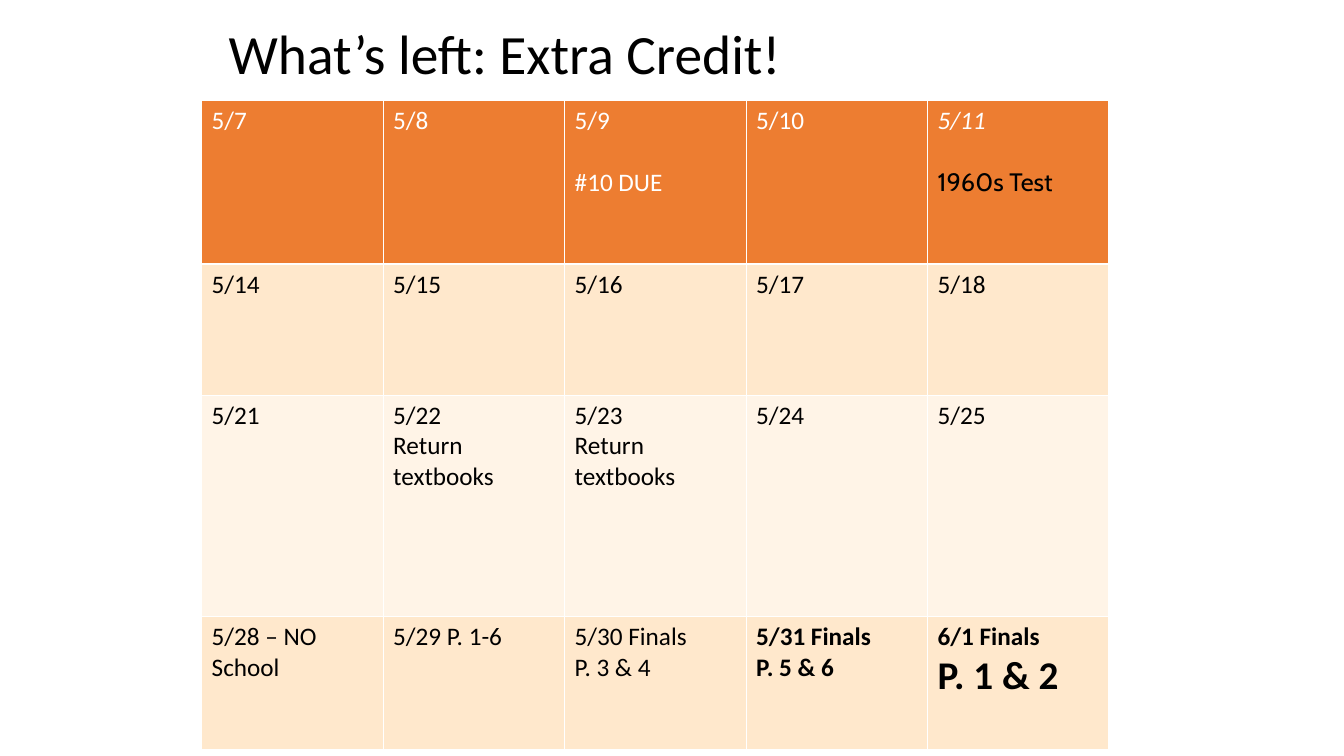
"""Build the calendar slide of remaining extra-credit dates."""
import pptx
import pptx.util
import pptx.dml.color
import pptx.enum.text
import pptx.oxml
import pptx.oxml.ns

TITLE = "What’s left: Extra Credit!"
WEEKS = [
    ["5/7", "5/8", "5/9\n#10 DUE", "5/10", "5/11\n1960s Test"],
    ["5/14", "5/15", "5/16", "5/17", "5/18"],
    ["5/21", "5/22\nReturn textbooks", "5/23\nReturn textbooks", "5/24", "5/25"],
    ["5/28 – NO School", "5/29 P. 1-6", "5/30 Finals\nP. 3 & 4",
     "5/31 Finals\nP. 5 & 6", "6/1 Finals\nP. 1 & 2"],
]
ROW_HEIGHTS = [1.62, 1.3, 2.2, 1.32]
ROW_FILLS = ["ED7D31", "FFE8CC", "FFF4E7", "FFE8CC"]
COLUMN_WIDTH = 1.8
HEADER_GAP = 22
BODY = {"name": "Calibri", "size": 18, "bold": False, "italic": False, "color": "000000"}
HEADER = {"color": "FFFFFF"}
SPECIAL = {
    "5/11": {"italic": True},
    "1960s Test": {"name": "Cabin", "color": "000000"},
    "5/31 Finals": {"bold": True},
    "P. 5 & 6": {"bold": True},
    "6/1 Finals": {"bold": True},
    "P. 1 & 2": {"bold": True, "size": 28},
}
BORDER = (
    '<a:{side} {ns} w="12700"><a:solidFill><a:srgbClr val="FFFFFF"/></a:solidFill></a:{side}>'
)


def rgb(value):
    """Return the colour for a hex string."""
    return pptx.dml.color.RGBColor.from_string(value)


def add_text(p, text, formats):
    """Add a formatted run to a paragraph."""
    r = p.add_run()
    r.text = text
    for key, value in formats.items():
        if key == "color":
            r.font.color.rgb = rgb(value)
        else:
            setattr(r.font, key, pptx.util.Pt(value) if key == "size" else value)


def add_borders(cell):
    """Give a cell thin white borders."""
    tc_pr = cell._tc.get_or_add_tcPr()
    for i, side in enumerate(("lnL", "lnR", "lnT", "lnB")):
        xml = BORDER.format(side=side, ns=pptx.oxml.ns.nsdecls("a"))
        tc_pr.insert(i, pptx.oxml.parse_xml(xml))


def add_title(s):
    """Add the slide title."""
    box = s.shapes.add_textbox(*map(pptx.util.Inches, (2.17, 0.3, 9, 0.53)))
    tf = box.text_frame
    tf.word_wrap = True
    tf.vertical_anchor = pptx.enum.text.MSO_ANCHOR.MIDDLE
    p = tf.paragraphs[0]
    p.line_spacing = 0.9
    add_text(p, TITLE, BODY | {"size": 39.6})


def add_calendar(s):
    """Add the calendar, one row for each week."""
    columns = len(WEEKS[0])
    size = (2, 1, columns * COLUMN_WIDTH, sum(ROW_HEIGHTS))
    table = s.shapes.add_table(len(WEEKS), columns, *map(pptx.util.Inches, size)).table
    for row, week in enumerate(WEEKS):
        table.rows[row].height = pptx.util.Inches(ROW_HEIGHTS[row])
        base = BODY | (HEADER if row == 0 else {})
        for column, day in enumerate(week):
            cell = table.cell(row, column)
            cell.fill.solid()
            cell.fill.fore_color.rgb = rgb(ROW_FILLS[row])
            add_borders(cell)
            tf = cell.text_frame
            for i, line in enumerate(day.split("\n")):
                p = tf.add_paragraph() if i else tf.paragraphs[0]
                if i and row == 0:
                    p.space_before = pptx.util.Pt(HEADER_GAP)
                add_text(p, line, base | SPECIAL.get(line, {}))


def main():
    """Build and save the presentation."""
    prs = pptx.Presentation()
    prs.slide_width = pptx.util.Inches(13.33)
    prs.slide_height = pptx.util.Inches(7.5)
    s = prs.slides.add_slide(prs.slide_layouts[6])
    add_title(s)
    add_calendar(s)
    prs.save("out.pptx")


if __name__ == "__main__":
    main()
